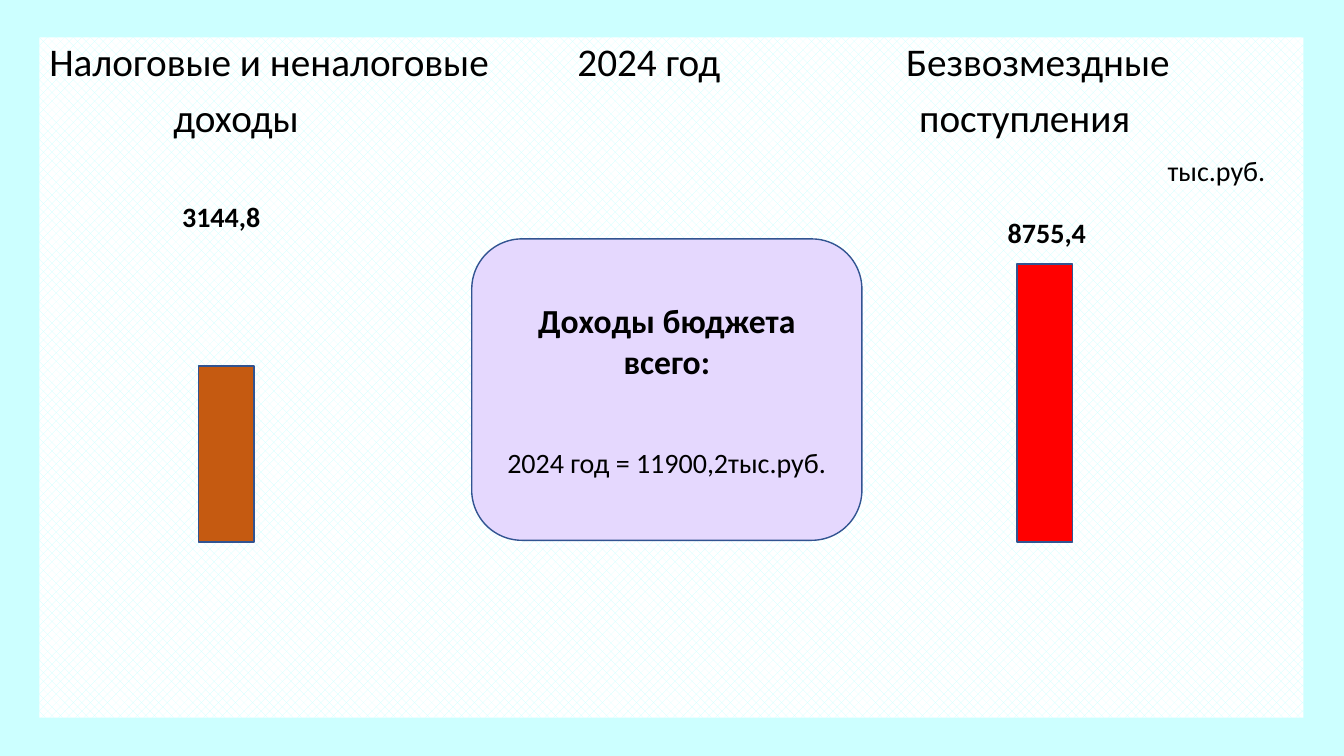
from dataclasses import dataclass

from lxml.etree import SubElement
from pptx import Presentation
from pptx.dml.color import RGBColor
from pptx.enum.dml import MSO_PATTERN
from pptx.enum.shapes import MSO_SHAPE
from pptx.enum.text import MSO_ANCHOR, PP_ALIGN
from pptx.oxml.ns import qn
from pptx.shapes.autoshape import Shape
from pptx.slide import Slide
from pptx.text.text import _Paragraph as Paragraph
from pptx.util import Inches, Pt

SLIDE_WIDTH, SLIDE_HEIGHT = Inches(13.33), Inches(7.5)
COLUMN, ROW = SLIDE_WIDTH / 100, SLIDE_HEIGHT / 100

FONT = "Calibri"
BLACK = RGBColor(0x00, 0x00, 0x00)
WHITE = RGBColor(0xFF, 0xFF, 0xFF)
AQUA = RGBColor(0xCC, 0xFF, 0xFF)
LILAC = RGBColor(0xE5, 0xD8, 0xFE)
BROWN = RGBColor(0xC5, 0x5A, 0x11)
RED = RGBColor(0xFF, 0x00, 0x00)
OUTLINE = RGBColor(0x32, 0x54, 0x91)

BAR_BASE, BAR_WIDTH = 71.73, 4.13
LABEL_HEIGHT = 5.87


@dataclass(frozen=True)
class Box:
    """An area in columns and rows, each a hundredth of the slide."""
    left: float
    top: float
    width: float
    height: float

    def lengths(self) -> tuple[int, ...]:
        return (round(self.left * COLUMN), round(self.top * ROW),
                round(self.width * COLUMN), round(self.height * ROW))


@dataclass(frozen=True)
class Bar:
    left: float
    height: float
    color: RGBColor
    value: str
    label: Box


@dataclass(frozen=True)
class HeadingLine:
    text: str
    tab_stops: tuple[float, ...]


PANEL = Box(2.93, 4.93, 94.05, 90)
UNIT = Box(52.05, 19.6, 42.83, 59.2)
TOTAL = Box(35.1, 31.6, 29.03, 39.87)
HEADINGS = [
    HeadingLine("Налоговые и неналоговые\t2024 год\tБезвозмездные", (39.3, 63.75)),
    HeadingLine("\tдоходы\tпоступления", (9.23, 64.73)),
]
BARS = [
    Bar(14.78, 23.33, BROWN, "3144,8", Box(10.8, 25.73, 11.33, LABEL_HEIGHT)),
    Bar(75.68, 36.8, RED, "8755,4", Box(70.58, 27.87, 14.63, LABEL_HEIGHT)),
]


def add_run(paragraph: Paragraph, text: str, size: int, bold: bool = False) -> None:
    run = paragraph.add_run()
    run.text = text
    run.font.name = FONT
    run.font.size = Pt(size)
    run.font.bold = bold
    run.font.color.rgb = BLACK


def add_tab_stops(paragraph: Paragraph, columns: tuple[float, ...]) -> None:
    tab_list = SubElement(paragraph._p.get_or_add_pPr(), qn("a:tabLst"))
    for column in columns:
        SubElement(tab_list, qn("a:tab"), pos=str(round(column * COLUMN)), algn="l")


def add_filled_shape(slide: Slide, kind: MSO_SHAPE, box: Box, color: RGBColor) -> Shape:
    shape = slide.shapes.add_shape(kind, *box.lengths())
    shape.shadow.inherit = False
    shape.fill.solid()
    shape.fill.fore_color.rgb = color
    shape.line.color.rgb = OUTLINE
    shape.line.width = Pt(1)
    return shape


def add_text_box(slide: Slide, box: Box, text: str, alignment: PP_ALIGN,
                 bold: bool = False, space_before: float = 0) -> None:
    frame = slide.shapes.add_textbox(*box.lengths()).text_frame
    frame.word_wrap = True
    paragraph = frame.paragraphs[0]
    paragraph.alignment = alignment
    paragraph.space_before = Pt(space_before)
    add_run(paragraph, text, 20, bold)


def add_panel(slide: Slide) -> None:
    """Draw the woven panel with the column headings."""
    panel = slide.shapes.add_shape(MSO_SHAPE.RECTANGLE, *PANEL.lengths())
    panel.shadow.inherit = False
    panel.fill.patterned()
    panel.fill.pattern = MSO_PATTERN.WEAVE
    panel.fill.fore_color.rgb = AQUA
    panel.fill.back_color.rgb = WHITE
    panel.line.fill.background()
    frame = panel.text_frame
    frame.vertical_anchor = MSO_ANCHOR.TOP
    for index, heading in enumerate(HEADINGS):
        paragraph = frame.add_paragraph() if index else frame.paragraphs[0]
        paragraph.alignment = PP_ALIGN.LEFT
        paragraph.line_spacing = 0.9
        paragraph.space_before = Pt(10)
        add_tab_stops(paragraph, heading.tab_stops)
        add_run(paragraph, heading.text, 28)


def add_bar(slide: Slide, bar: Bar) -> None:
    area = Box(bar.left, BAR_BASE - bar.height, BAR_WIDTH, bar.height)
    add_filled_shape(slide, MSO_SHAPE.RECTANGLE, area, bar.color)
    add_text_box(slide, bar.label, bar.value, PP_ALIGN.CENTER, bold=True)


def add_total(slide: Slide) -> None:
    card = add_filled_shape(slide, MSO_SHAPE.ROUNDED_RECTANGLE, TOTAL, LILAC)
    frame = card.text_frame
    frame.word_wrap = True
    frame.vertical_anchor = MSO_ANCHOR.MIDDLE
    title, amount = frame.paragraphs[0], frame.add_paragraph()
    title.alignment = amount.alignment = PP_ALIGN.CENTER
    add_run(title, "Доходы бюджета всего:", 24, bold=True)
    amount.space_before = Pt(46)
    add_run(amount, "2024 год = 11900,2тыс.руб.", 20)


def main() -> None:
    presentation = Presentation()
    presentation.slide_width, presentation.slide_height = SLIDE_WIDTH, SLIDE_HEIGHT
    slide = presentation.slides.add_slide(presentation.slide_layouts[6])
    slide.background.fill.solid()
    slide.background.fill.fore_color.rgb = AQUA
    add_panel(slide)
    for bar in BARS:
        add_bar(slide, bar)
    add_text_box(slide, UNIT, "тыс.руб.", PP_ALIGN.RIGHT, space_before=5)
    add_total(slide)
    presentation.save("out.pptx")


if __name__ == "__main__":
    main()
